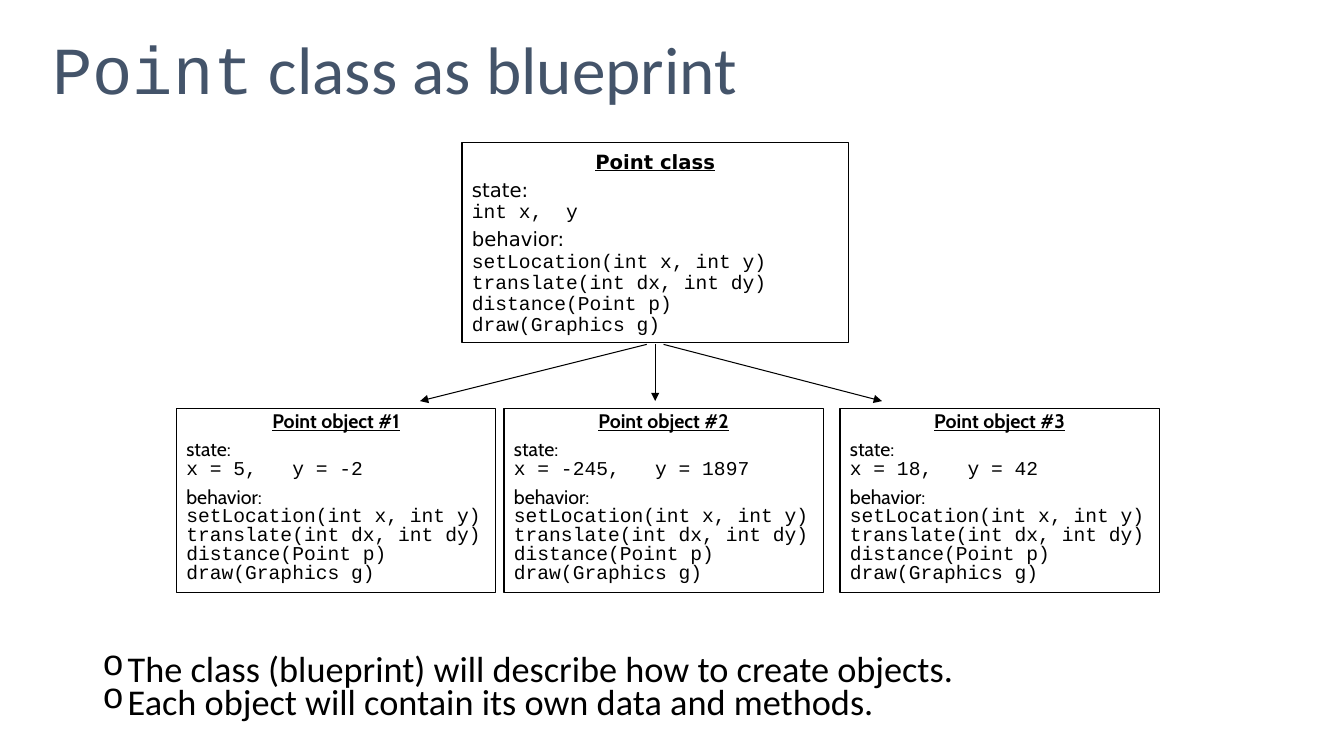
from dataclasses import dataclass

from lxml import etree
from pptx import Presentation
from pptx import util as u
from pptx.dml.color import RGBColor
from pptx.enum import shapes, text
from pptx.oxml.ns import qn

Pt = u.Pt


@dataclass(frozen=True)
class Theme:
    title: RGBColor = RGBColor(0x44, 0x54, 0x6A)
    ink: RGBColor = RGBColor(0, 0, 0)
    paper: RGBColor = RGBColor(255, 255, 255)
    body_font: str = "Calibri"
    code_font: str = "Courier New"
    title_size: float = 48
    list_size: float = 25.9
    box_size: float = 14
    line_width: float = 0.75


@dataclass(frozen=True)
class BoxStyle:
    font: str
    heading_spacing: float
    line_spacing: float
    space_before: float
    filled: bool = False


@dataclass(frozen=True)
class Box:
    heading: str
    state: str
    left: float
    top: float
    width: float
    height: float
    style: BoxStyle


@dataclass(frozen=True)
class Arrow:
    x1: float
    x2: float


THEME = Theme()
METHODS = (
    "setLocation(int x, int y)",
    "translate(int dx, int dy)",
    "distance(Point p)",
    "draw(Graphics g)",
)
CLASS_STYLE = BoxStyle("DejaVu Sans", 1.1, 0.9, 5)
OBJECT_STYLE = BoxStyle("Cabin", 0.8, 0.8, 7)
FILLED_STYLE = BoxStyle("Cabin", 0.8, 0.8, 7, True)
OBJECT_TOP, OBJECT_WIDTH, OBJECT_HEIGHT = 291.5, 228, 132
ARROW_TOP, ARROW_BOTTOM = 246, 286.5

CLASS_BOX = Box("Point class", "int x,  y", 330, 102, 276, 142.5, CLASS_STYLE)
OBJECT_BOXES = [
    Box(f"Point object #{n}", state, left, OBJECT_TOP, OBJECT_WIDTH, OBJECT_HEIGHT, style)
    for n, (state, left, style) in enumerate(
        (
            ("x = 5,   y = -2", 126, FILLED_STYLE),
            ("x = -245,   y = 1897", 360, OBJECT_STYLE),
            ("x = 18,   y = 42", 600, OBJECT_STYLE),
        ),
        start=1,
    )
]
ARROWS = (Arrow(462, 300), Arrow(468, 468), Arrow(474, 630))
BULLETS = (
    "The class (blueprint) will describe how to create objects.",
    "Each object will contain its own data and methods.",
)


def place(sp, left: float, top: float, width: float, height: float) -> None:
    sp.left, sp.top, sp.width, sp.height = map(Pt, (left, top, width, height))


def add_run(p, words: str, font: str) -> None:
    r = p.add_run()
    r.text = words
    r.font.name = font


def add_title(s) -> None:
    sp = s.shapes.title
    place(sp, 30, 0, 900, 104.5)
    tf = sp.text_frame
    tf.auto_size = text.MSO_AUTO_SIZE.NONE
    tf.vertical_anchor = text.MSO_ANCHOR.MIDDLE
    p = tf.paragraphs[0]
    p.alignment = text.PP_ALIGN.LEFT
    p.line_spacing = 0.9
    p.font.size = Pt(THEME.title_size)
    p.font.color.rgb = THEME.title
    add_run(p, "Point", THEME.code_font)
    add_run(p, " class as blueprint", THEME.body_font)


def add_bullets(s) -> None:
    sp = s.placeholders[1]
    place(sp, 30, 142.5, 900, 407.5)
    tf = sp.text_frame
    tf.auto_size = text.MSO_AUTO_SIZE.NONE
    tf.vertical_anchor = text.MSO_ANCHOR.BOTTOM
    tf.margin_bottom = Pt(35)
    for i, words in enumerate(BULLETS):
        p = tf.add_paragraph() if i else tf.paragraphs[0]
        p.text = words
        p.level = 1
        p.line_spacing = 0.6
        p.space_before = Pt(5)
        p.font.name = THEME.body_font
        p.font.size = Pt(THEME.list_size)
        p.font.color.rgb = THEME.ink
        pPr = p._p.get_or_add_pPr()
        pPr.set("marL", str(Pt(54)))
        pPr.set("indent", str(Pt(-18)))
        bullet_font = etree.Element(qn("a:buFont"), typeface=THEME.code_font)
        bullet = etree.Element(qn("a:buChar"), char="o")
        pPr.find(qn("a:defRPr")).addprevious(bullet_font)
        bullet_font.addnext(bullet)


def add_section(tf, label: str, code: tuple[str, ...], style: BoxStyle) -> None:
    p = tf.add_paragraph()
    p.alignment = text.PP_ALIGN.LEFT
    p.line_spacing = style.line_spacing
    p.space_before = Pt(style.space_before)
    p.font.size = Pt(THEME.box_size)
    p.font.color.rgb = THEME.ink
    add_run(p, label, style.font)
    for line in code:
        p.add_line_break()
        add_run(p, line, THEME.code_font)
    for br in p._p.findall(qn("a:br")):
        etree.SubElement(br, qn("a:rPr"), sz=str(THEME.box_size * 100))


def add_box(s, box: Box) -> None:
    sp = s.shapes.add_shape(shapes.MSO_SHAPE.RECTANGLE, 0, 0, 0, 0)
    place(sp, box.left, box.top, box.width, box.height)
    sp.shadow.inherit = False
    sp.line.color.rgb = THEME.ink
    sp.line.width = Pt(THEME.line_width)
    if box.style.filled:
        sp.fill.solid()
        sp.fill.fore_color.rgb = THEME.paper
    else:
        sp.fill.background()
    tf = sp.text_frame
    tf.word_wrap = True
    tf.vertical_anchor = text.MSO_ANCHOR.TOP
    p = tf.paragraphs[0]
    p.text = box.heading
    p.alignment = text.PP_ALIGN.CENTER
    p.line_spacing = box.style.heading_spacing
    p.font.name = box.style.font
    p.font.size = Pt(THEME.box_size)
    p.font.color.rgb = THEME.ink
    p.font.bold = p.font.underline = True
    add_section(tf, "state:", (box.state,), box.style)
    add_section(tf, "behavior:", METHODS, box.style)


def add_arrow(group, arrow: Arrow) -> None:
    c = group.shapes.add_connector(
        shapes.MSO_CONNECTOR.STRAIGHT,
        Pt(arrow.x1), Pt(ARROW_TOP), Pt(arrow.x2), Pt(ARROW_BOTTOM),
    )
    c.line.color.rgb = THEME.ink
    c.line.width = Pt(THEME.line_width)
    etree.SubElement(c.line._get_or_add_ln(), qn("a:tailEnd"), type="triangle")
    etree.SubElement(c._element.spPr, qn("a:effectLst"))


def main() -> None:
    prs = Presentation()
    prs.slide_width, prs.slide_height = Pt(960), Pt(540)
    s = prs.slides.add_slide(prs.slide_layouts[1])
    add_title(s)
    add_bullets(s)
    add_box(s, CLASS_BOX)
    group = s.shapes.add_group_shape()
    for arrow in ARROWS:
        add_arrow(group, arrow)
    for box in OBJECT_BOXES:
        add_box(s, box)
    prs.save("out.pptx")


if __name__ == "__main__":
    main()
